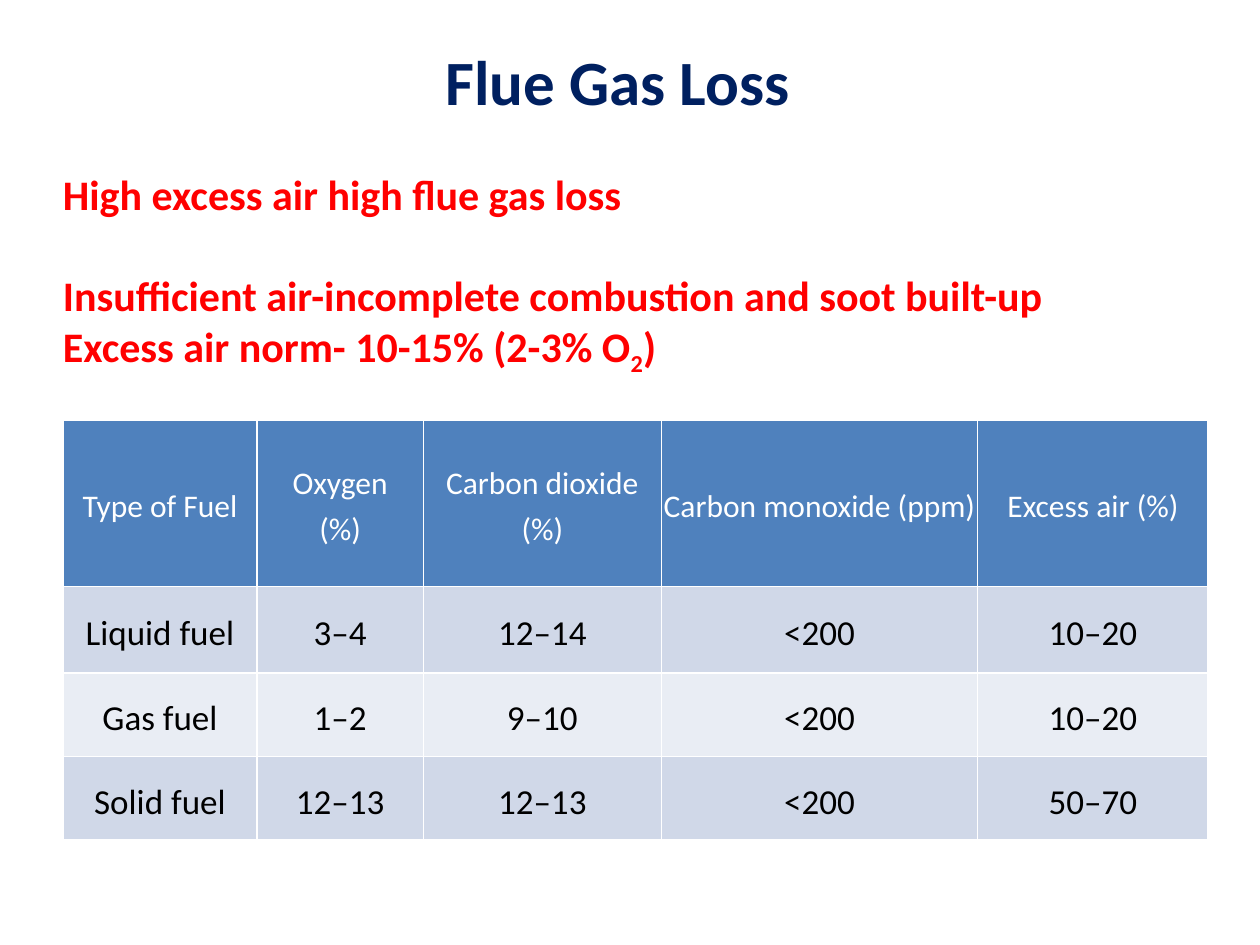
from pptx import Presentation
from pptx import util as u
from pptx.dml import color
from pptx.enum import text

COLORS = {
    "title": "002060",
    "alert": "FF0000",
    "header": "4F81BD",
    "odd": "D0D8E8",
    "even": "E9EDF4",
    "light": "FFFFFF",
    "dark": "000000",
}


class FlueGasSlide:
    font = "Calibri"
    unit = 1 / 6

    def __init__(self, prs):
        self.s = prs.slides.add_slide(prs.slide_layouts[6])

    def grid(self, *steps):
        return [u.Inches(n * self.unit) for n in steps]

    def rgb(self, name):
        return color.RGBColor.from_string(COLORS[name])

    def style(self, p, size, name, bold, align):
        p.alignment = align
        for r in p.runs:
            r.font.name = self.font
            r.font.size = u.Pt(size)
            r.font.bold = bold
            r.font.color.rgb = self.rgb(name)

    def textbox(self, box, lines, size, name, align):
        tf = self.s.shapes.add_textbox(*self.grid(*box)).text_frame
        tf.word_wrap = True
        tf.margin_left = tf.margin_top = tf.margin_right = tf.margin_bottom = 0
        tf.text = "\n".join(lines)
        for p in tf.paragraphs:
            self.style(p, size, name, True, align)
        return tf

    def subscript(self, p, digit, tail):
        base = p.runs[0].font
        for content, offset in ((digit, "-25000"), (tail, "0")):
            r = p.add_run()
            r.text = content
            r.font.name, r.font.size, r.font.bold = base.name, base.size, base.bold
            r.font.color.rgb = base.color.rgb
            r._r.get_or_add_rPr().set("baseline", offset)

    def cell(self, cell, content, fill, size, name):
        cell.fill.solid()
        cell.fill.fore_color.rgb = self.rgb(fill)
        cell.vertical_anchor = text.MSO_ANCHOR.MIDDLE
        cell.margin_left = cell.margin_top = cell.margin_right = cell.margin_bottom = 0
        cell.text_frame.text = content
        for p in cell.text_frame.paragraphs:
            p.line_spacing = 1.2
            self.style(p, size, name, False, text.PP_ALIGN.CENTER)

    def table(self, left, top, widths, heights, rows):
        box = self.grid(left, top, sum(widths), sum(heights))
        table = self.s.shapes.add_table(len(rows), len(widths), *box).table
        for column, width in zip(table.columns, self.grid(*widths)):
            column.width = width
        for row, height in zip(table.rows, self.grid(*heights)):
            row.height = height
        for i, values in enumerate(rows):
            fill = "header" if i == 0 else "odd" if i % 2 else "even"
            size, name = (18, "light") if i == 0 else (20, "dark")
            for j, value in enumerate(values):
                self.cell(table.cell(i, j), value, fill, size, name)


def main():
    prs = Presentation()
    prs.slide_width, prs.slide_height = u.Inches(10), u.Inches(7.5)
    slide = FlueGasSlide(prs)
    slide.textbox((8, 2, 42.8, 3.66), ["Flue Gas Loss"], 36, "title", text.PP_ALIGN.CENTER)
    tf = slide.textbox(
        (3, 8, 54, 10),
        [
            "High excess air high flue gas loss",
            "Insufficient air-incomplete combustion and soot built-up",
            "Excess air norm- 10-15% (2-3% O",
        ],
        24, "alert", text.PP_ALIGN.JUSTIFY,
    )
    tf.paragraphs[0].space_after = u.Pt(29.3)
    slide.subscript(tf.paragraphs[-1], "2", ")")
    slide.table(
        3, 20,
        (9.24, 7.92, 11.34, 15.06, 10.98),
        (7.92, 4.14, 3.96, 3.96),
        [
            ("Type of Fuel", "Oxygen\n(%)", "Carbon dioxide\n(%)", "Carbon monoxide (ppm)", "Excess air (%)"),
            ("Liquid fuel", "3–4", "12–14", "<200", "10–20"),
            ("Gas fuel", "1–2", "9–10", "<200", "10–20"),
            ("Solid fuel", "12–13", "12–13", "<200", "50–70"),
        ],
    )
    prs.save("out.pptx")


if __name__ == "__main__":
    main()
